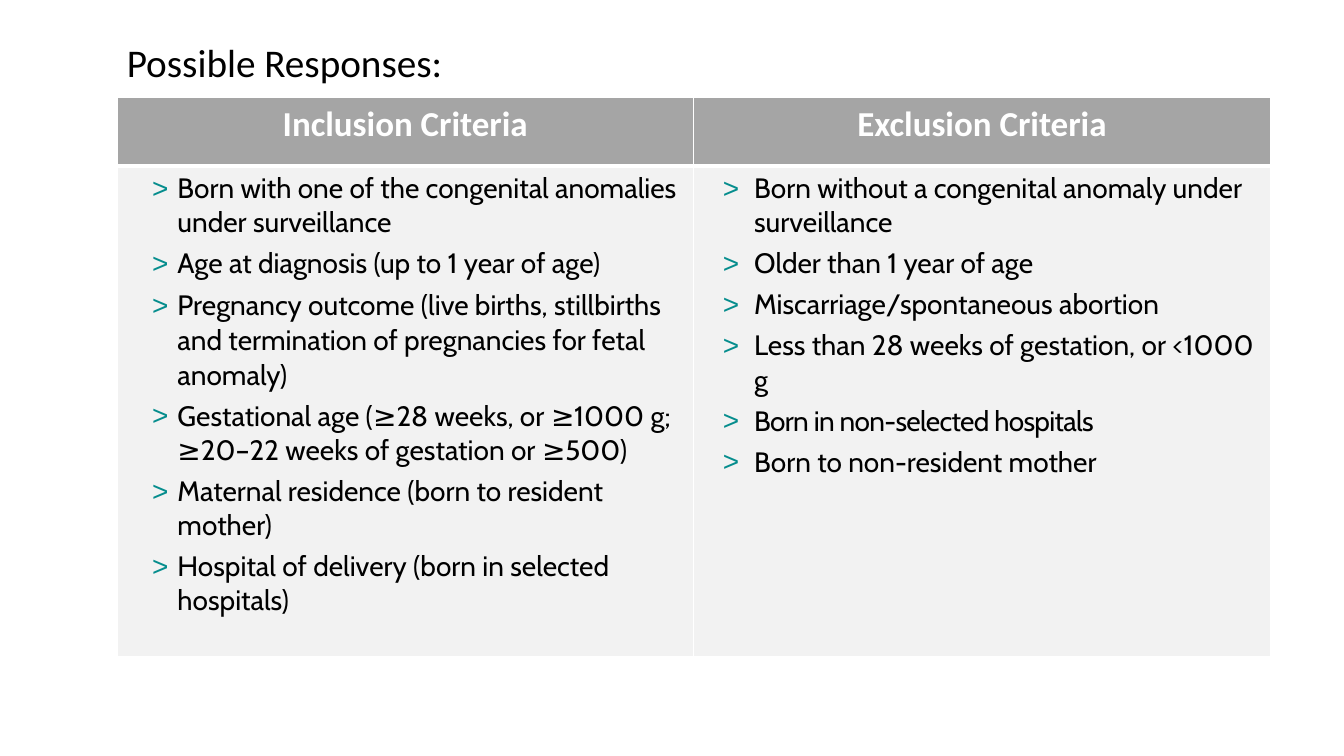
from dataclasses import dataclass

from lxml import etree
from pptx import Presentation
from pptx import util as u
from pptx.dml.color import RGBColor
from pptx.enum import text
from pptx.oxml import ns


@dataclass(frozen=True)
class Theme:
    ink: str = "000000"
    white: str = "FFFFFF"
    header_fill: str = "A5A5A5"
    body_fill: str = "F2F2F2"
    bullet: str = "058D8D"
    heading_font: str = "Calibri"
    body_font: str = "Cabin"
    title_size: int = 28
    header_size: int = 25
    body_size: int = 20


THEME = Theme()
SLIDE_WIDTH, SLIDE_HEIGHT = u.Inches(13.33), u.Inches(7.5)
LEFT = u.Inches(1.16)
TABLE_TOP = u.Inches(0.97)
COLUMN_WIDTH = u.Inches(5.72)
ROW_HEIGHTS = [u.Inches(0.68), u.Inches(4.86)]

CRITERIA = [
    ("Inclusion Criteria", 0.25, [
        "Born with one of the congenital anomalies under surveillance",
        "Age at diagnosis (up to 1 year of age)",
        "Pregnancy outcome (live births, stillbirths and termination of pregnancies for fetal anomaly)",
        "Gestational age (≥28 weeks, or ≥1000 g; ≥20–22 weeks of gestation or ≥500)",
        "Maternal residence (born to resident mother)",
        "Hospital of delivery (born in selected hospitals)",
    ]),
    ("Exclusion Criteria", 0.31, [
        "Born without a congenital anomaly under surveillance",
        "Older than 1 year of age",
        "Miscarriage/spontaneous abortion",
        "Less than 28 weeks of gestation, or <1000 g",
        "Born in non-selected hospitals",
        "Born to non-resident mother",
    ]),
]
LINE_SPACING = {"Pregnancy outcome": 1.02}
TIGHT_TEXT = "Born in non-selected hospitals"


def add_element(parent, tag, **attributes):
    return etree.SubElement(parent, ns.qn(tag), attributes)


def apply_format(target, values):
    for name, value in values.items():
        setattr(target, name, value)


def write_run(paragraph, words, color, **font_values):
    run = paragraph.add_run()
    run.text = words
    apply_format(run.font, font_values)
    run.font.color.rgb = RGBColor.from_string(color)
    return run


def add_title(slide, words):
    box = slide.shapes.add_textbox(
        LEFT, u.Inches(0.38), SLIDE_WIDTH - LEFT, u.Inches(0.55))
    box.text_frame.word_wrap = True
    paragraph = box.text_frame.paragraphs[0]
    paragraph.line_spacing = 0.9
    write_run(paragraph, words, THEME.ink,
              name=THEME.heading_font, size=u.Pt(THEME.title_size))


def style_cell(cell, fill, bottom_width=1, top_width=1):
    properties = cell._tc.get_or_add_tcPr()
    widths = {"a:lnL": 1, "a:lnR": 1, "a:lnT": top_width, "a:lnB": bottom_width}
    for tag, width in widths.items():
        line = add_element(properties, tag, w=str(u.Pt(width)))
        add_element(add_element(line, "a:solidFill"), "a:srgbClr", val=THEME.white)
    cell.fill.solid()
    cell.fill.fore_color.rgb = RGBColor.from_string(fill)


def add_bullet(paragraph, hanging):
    properties = paragraph._p.get_or_add_pPr()
    properties.set("marL", str(u.Inches(0.5)))
    properties.set("indent", str(-u.Inches(hanging)))
    add_element(add_element(properties, "a:buClr"), "a:srgbClr", val=THEME.bullet)
    add_element(properties, "a:buFont", typeface="Arial")
    add_element(properties, "a:buChar", char=">")


def fill_header(cell, words):
    style_cell(cell, THEME.header_fill, bottom_width=3)
    paragraph = cell.text_frame.paragraphs[0]
    paragraph.alignment = text.PP_ALIGN.CENTER
    write_run(paragraph, words, THEME.white, name=THEME.heading_font,
              size=u.Pt(THEME.header_size), bold=True)


def fill_list(cell, items, hanging):
    style_cell(cell, THEME.body_fill, top_width=3)
    for index, item in enumerate(items):
        frame = cell.text_frame
        paragraph = frame.add_paragraph() if index else frame.paragraphs[0]
        add_bullet(paragraph, hanging)
        if index:
            paragraph.space_before = u.Pt(5)
        for start, spacing in LINE_SPACING.items():
            if item.startswith(start):
                paragraph.line_spacing = spacing
        run = write_run(paragraph, item, THEME.ink, name=THEME.body_font,
                        size=u.Pt(THEME.body_size), bold=False)
        if item == TIGHT_TEXT:
            run._r.get_or_add_rPr().set("spc", "-50")


def add_criteria_table(slide):
    columns = len(CRITERIA)
    table = slide.shapes.add_table(
        len(ROW_HEIGHTS), columns, LEFT, TABLE_TOP,
        COLUMN_WIDTH * columns, sum(ROW_HEIGHTS)).table
    apply_format(table, {"first_row": True, "horz_banding": False})
    for row, height in zip(table.rows, ROW_HEIGHTS):
        row.height = height
    for column, (heading, hanging, items) in enumerate(CRITERIA):
        table.columns[column].width = COLUMN_WIDTH
        fill_header(table.cell(0, column), heading)
        fill_list(table.cell(1, column), items, hanging)


def main():
    presentation = Presentation()
    apply_format(presentation, {"slide_width": SLIDE_WIDTH, "slide_height": SLIDE_HEIGHT})
    slide = presentation.slides.add_slide(presentation.slide_layouts[6])
    add_title(slide, "Possible Responses:")
    add_criteria_table(slide)
    presentation.save("out.pptx")


if __name__ == "__main__":
    main()
